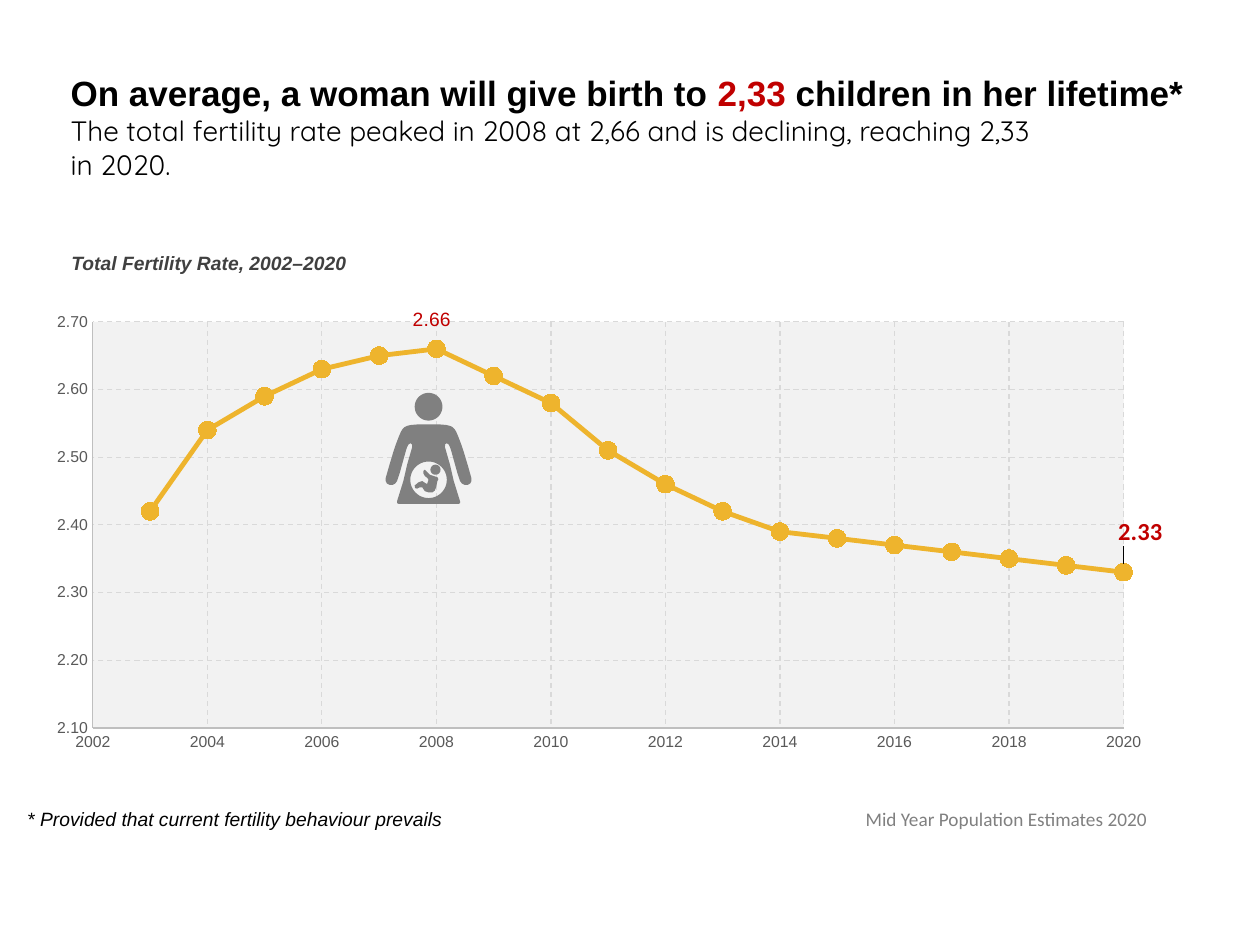
from dataclasses import dataclass
from math import cos, pi, sin

from lxml.etree import SubElement
from pptx import Presentation
from pptx.chart.data import XyChartData
from pptx.dml.color import RGBColor
from pptx.enum.chart import (XL_CHART_TYPE, XL_LABEL_POSITION, XL_MARKER_STYLE,
                             XL_TICK_MARK)
from pptx.enum.dml import MSO_LINE
from pptx.enum.text import MSO_ANCHOR, MSO_AUTO_SIZE, PP_ALIGN
from pptx.oxml import parse_xml
from pptx.oxml.ns import nsdecls, qn
from pptx.util import Cm, Pt

RATES = [2.42, 2.54, 2.59, 2.63, 2.65, 2.66, 2.62, 2.58, 2.51,
         2.46, 2.42, 2.39, 2.38, 2.37, 2.36, 2.35, 2.34, 2.33]
FIRST_YEAR = 2003

RIGHT_BODY = [(0, 25), (8, 25), (14, 25.5), (17, 26.2), (19, 27.2), (20.8, 29),
              (22, 31), (23.5, 34.5), (26, 41), (28, 47), (31, 57), (34, 67.5),
              (34, 70), (33, 72), (31, 73), (28.5, 73), (26.5, 72), (25, 70),
              (23, 64), (18, 46), (17, 43), (16, 41), (14.5, 40), (13.2, 40.7),
              (13, 43), (17, 57), (20, 70), (25, 86), (25, 87.5), (24, 88), (0, 88)]
BABY_BODY = [(-3, 61), (-2, 62), (0, 64), (1, 65), (4, 66), (7, 67), (7.8, 68.5),
             (7, 70), (6, 75), (5, 77.5), (3, 79), (0, 79), (-3, 78), (-5, 75),
             (-7, 75), (-9, 76), (-10.7, 75.6), (-11, 73.5), (-8, 71), (-5, 70),
             (-2, 72), (-1, 72), (0, 69), (-1, 67.5), (-3, 66), (-4, 64), (-4, 62)]


@dataclass(frozen=True)
class Theme:
    """Hold the colours, fonts and type sizes of the slide."""
    ink: str = "000000"
    accent: str = "C00000"
    curve: str = "EEB42D"
    plot: str = "F2F2F2"
    grid: str = "D9D9D9"
    axis: str = "BFBFBF"
    axis_text: str = "595959"
    caption: str = "404040"
    muted: str = "808080"
    sans: str = "Arial"
    rounded: str = "Quicksand"
    humanist: str = "Calibri"
    headline: int = 20
    subhead: int = 16
    latest: int = 14
    note: int = 11
    chart: int = 10
    tick: int = 9


def circle(centre_x, centre_y, radius, steps=48):
    """Return the points of a circle."""
    angles = [2 * pi * step / steps for step in range(steps)]
    return [(centre_x + radius * cos(a), centre_y + radius * sin(a)) for a in angles]


class SlideBuilder:
    """Draw styled elements on one slide."""

    def __init__(self, slide, theme):
        """Keep the slide and its theme."""
        self.slide = slide
        self.theme = theme

    def style(self, font, size, color, name=None, bold=False, italic=False):
        """Set the look of a font."""
        font.name = name or self.theme.sans
        font.size, font.bold, font.italic = Pt(size), bold, italic
        font.color.rgb = RGBColor.from_string(color)

    def headline(self, place, pieces, sublines):
        """Fill the title with a coloured headline and lighter lines."""
        title = self.slide.shapes.title
        title.left, title.top, title.width, title.height = map(Cm, place)
        frame = title.text_frame
        frame.word_wrap, frame.auto_size = True, MSO_AUTO_SIZE.NONE
        frame.vertical_anchor = MSO_ANCHOR.TOP
        heading = frame.paragraphs[0]
        heading.alignment = PP_ALIGN.LEFT
        self.style(heading.font, self.theme.headline, self.theme.ink, bold=True)
        for words, color in pieces:
            run = heading.add_run()
            run.text = words
            run.font.color.rgb = RGBColor.from_string(color)
        for words in sublines:
            subline = frame.add_paragraph()
            subline.text, subline.alignment = words, PP_ALIGN.LEFT
            self.style(subline.font, self.theme.subhead, self.theme.ink,
                       self.theme.rounded)

    def note(self, place, words, color, wrap=True, **look):
        """Add a one-line text box."""
        frame = self.slide.shapes.add_textbox(*map(Cm, place)).text_frame
        frame.word_wrap = wrap
        frame.paragraphs[0].text = words
        self.style(frame.paragraphs[0].font, self.theme.note, color, **look)

    def line(self, line, color, width=0.75, dash=None):
        """Set colour, width and dash of a line."""
        line.color.rgb = RGBColor.from_string(color)
        line.width = Pt(width)
        if dash:
            line.dash_style = dash

    def axis(self, axis, low, high, step, number_format):
        """Scale and style one chart axis."""
        axis.minimum_scale, axis.maximum_scale, axis.major_unit = low, high, step
        axis.major_tick_mark = axis.minor_tick_mark = XL_TICK_MARK.NONE
        axis.has_major_gridlines = True
        axis.tick_labels.number_format = number_format
        axis.tick_labels.number_format_is_linked = False
        self.style(axis.tick_labels.font, self.theme.tick, self.theme.axis_text)
        self.line(axis.format.line, self.theme.axis)
        self.line(axis.major_gridlines.format.line, self.theme.grid, dash=MSO_LINE.DASH)

    def layout(self, **values):
        """Return a manual chart layout element."""
        layout = parse_xml(f'<c:layout {nsdecls("c")}><c:manualLayout/></c:layout>')
        for tag, value in values.items():
            SubElement(layout[0], qn(f"c:{tag}")).set("val", str(value))
        return layout

    def point_label(self, series, index, shift, size, **look):
        """Label one point with its value, shifted from its usual place."""
        label = series.points[index].data_label
        self.style(label.font, size, self.theme.accent, **look)
        label.position = XL_LABEL_POSITION.ABOVE
        for node in series._element.iter(qn("c:dLbl")):
            if node.find(qn("c:idx")).get("val") == str(index):
                node.insert(1, self.layout(x=shift[0], y=shift[1]))

    def rate_chart(self, place, first_year, rates):
        """Add the fertility line over the years."""
        chart_data = XyChartData(number_format="0.00")
        points = chart_data.add_series("Series 1")
        for year, rate in enumerate(rates, first_year):
            points.add_data_point(year, rate)
        chart = self.slide.shapes.add_chart(
            XL_CHART_TYPE.XY_SCATTER_LINES, *map(Cm, place), chart_data).chart
        chart.has_legend = chart.has_title = False
        self.style(chart.font, self.theme.chart, self.theme.ink, self.theme.humanist)
        self.axis(chart.category_axis, 2002, 2020, 2, "0")
        self.axis(chart.value_axis, 2.1, 2.7, 0.1, "0.00")
        chart.plots[0].vary_by_categories = False

        area = chart._chartSpace.chart.plotArea
        for automatic in area.findall(qn("c:layout")):
            area.remove(automatic)
        area.insert(0, self.layout(layoutTarget="inner", xMode="edge", yMode="edge",
                                   x=0.051, y=0.04, w=0.913, h=0.888))
        area.append(parse_xml(
            f'<c:spPr {nsdecls("c", "a")}><a:solidFill><a:srgbClr '
            f'val="{self.theme.plot}"/></a:solidFill></c:spPr>'))

        series = chart.plots[0].series[0]
        self.line(series.format.line, self.theme.curve, 2.75)
        series.marker.style, series.marker.size = XL_MARKER_STYLE.CIRCLE, 10
        series.marker.format.fill.solid()
        series.marker.format.fill.fore_color.rgb = RGBColor.from_string(self.theme.curve)
        self.line(series.marker.format.line, self.theme.curve)
        self.point_label(series, rates.index(max(rates)), (-0.004, -0.01), self.theme.note)
        self.point_label(series, len(rates) - 1, (0.015, -0.026), self.theme.latest,
                         name=self.theme.humanist, bold=True)

    def pictogram(self, left, top, contours, unit):
        """Draw closed contours as one flat shape."""
        builder = None
        for contour in contours:
            start, *rest = [(x * unit, y * unit) for x, y in contour]
            if builder is None:
                builder = self.slide.shapes.build_freeform(*start)
            else:
                builder.move_to(*start)
            builder.add_line_segments(rest, close=True)
        figure = builder.convert_to_shape(Cm(left), Cm(top))
        figure.shadow.inherit = False
        figure.fill.solid()
        figure.fill.fore_color.rgb = RGBColor.from_string(self.theme.muted)
        figure.line.fill.background()


def main():
    """Build and save the fertility slide."""
    theme = Theme()
    deck = Presentation()
    deck.slide_width, deck.slide_height = Cm(25.4), Cm(19.05)
    page = SlideBuilder(deck.slides.add_slide(deck.slide_layouts[5]), theme)
    page.note((1.19, 4.95, 6.4, 0.73), "Total Fertility Rate, 2002–2020",
              theme.caption, bold=True, italic=True)
    page.rate_chart((0.71, 6.12, 22.76, 9.22), FIRST_YEAR, RATES)
    page.headline((1.17, 1.32, 23.67, 2.5),
                  [("On average, a woman will give birth to ", theme.ink),
                   ("2,33", theme.accent),
                   (" children in her lifetime*", theme.ink)],
                  ["The total fertility rate peaked in 2008 at 2,66 and is declining, "
                   "reaching 2,33", "in 2020."])
    page.note((0.3, 16.15, 9.2, 0.73),
              "* Provided that current fertility behaviour prevails",
              theme.ink, italic=True)
    left_body = [(-x, y) for x, y in reversed(RIGHT_BODY[1:-1])]
    page.pictogram(8.64, 7.92,
                   [circle(0, 11, 11), RIGHT_BODY + left_body, circle(0, 69, 14.5),
                    BABY_BODY, circle(5.5, 61, 4)], Cm(2.54) / 100)
    page.note((17.2, 16.15, 6.27, 0.73), "Mid Year Population Estimates 2020",
              theme.muted, wrap=False, name=theme.humanist)
    deck.save("out.pptx")


if __name__ == "__main__":
    main()
